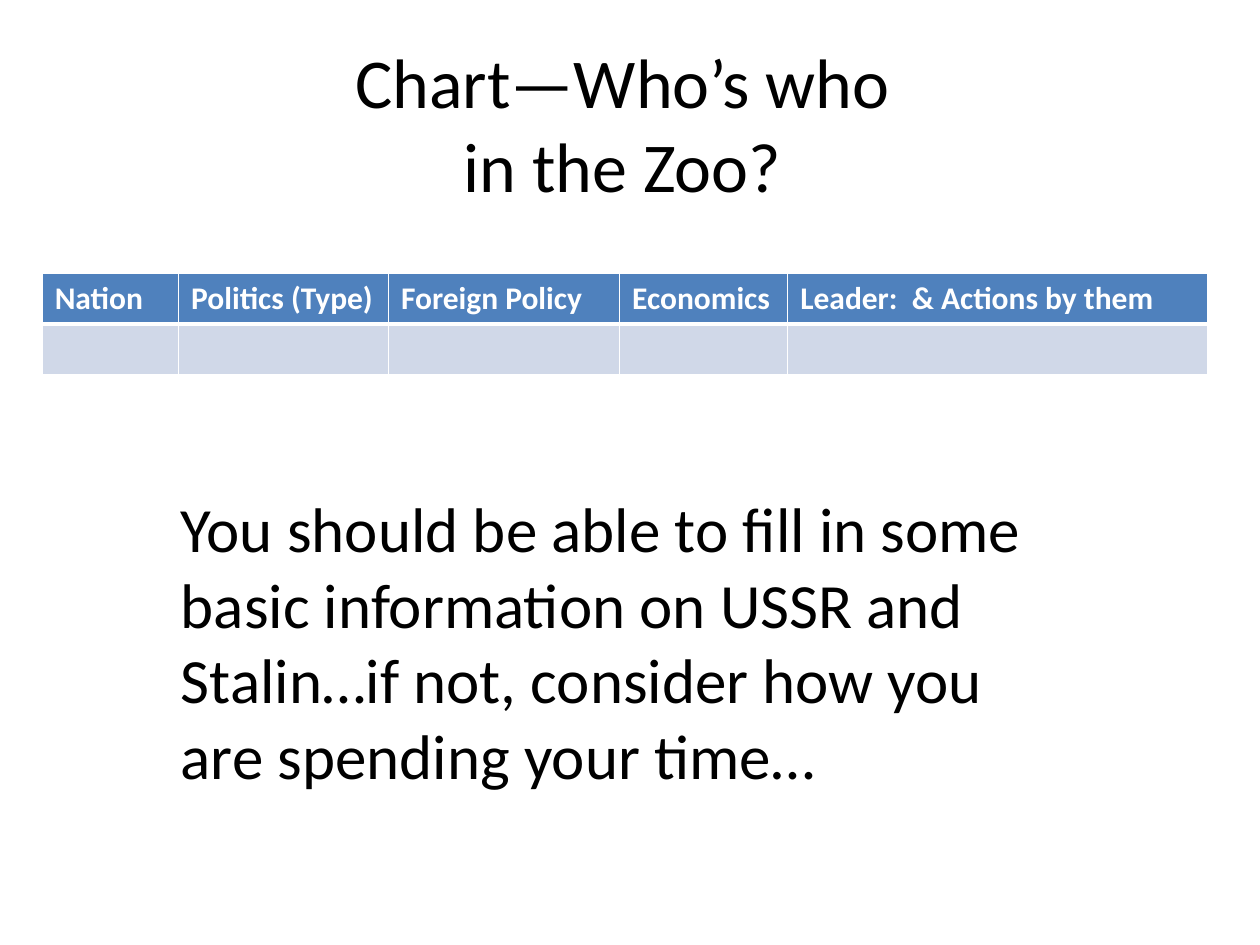
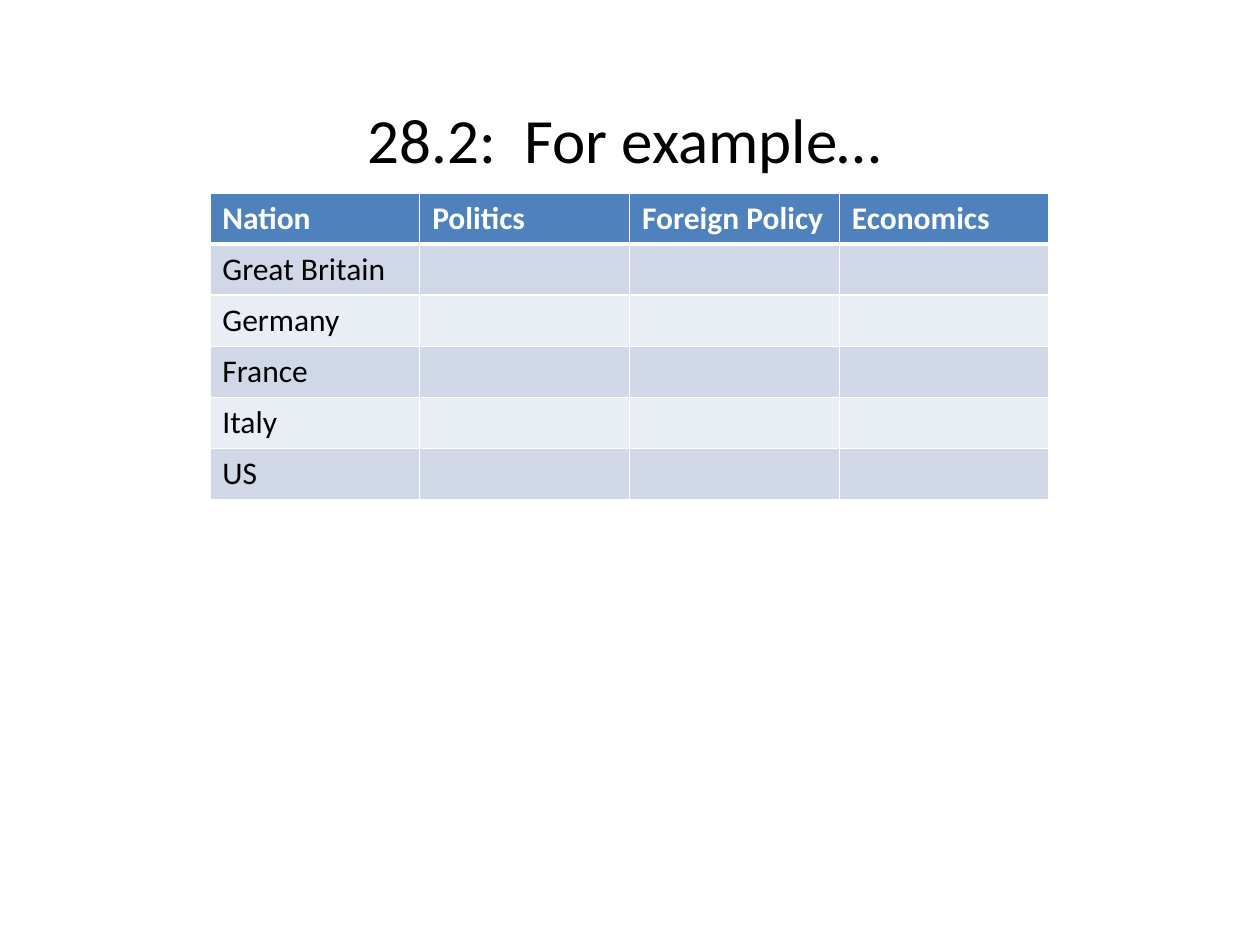
from lxml import etree
from pptx import Presentation
from pptx.dml.color import RGBColor
from pptx.enum.text import MSO_ANCHOR, MSO_AUTO_SIZE, PP_ALIGN
from pptx.oxml.ns import qn
from pptx.util import Cm, Pt

TOP = MSO_ANCHOR.TOP
GROW = MSO_AUTO_SIZE.SHAPE_TO_FIT_TEXT
LEFT = PP_ALIGN.LEFT
CENTER = PP_ALIGN.CENTER

FONT = "Calibri"
COLORS = {
    "text": "000000",
    "header_text": "FFFFFF",
    "header": "4F81BD",
    "band_dark": "D0D8E8",
    "band_light": "E9EDF4",
    "border": "FFFFFF",
}
CONTENT_LAYOUT = 1
TITLE_LAYOUT = 5
ROW_HEIGHT = 1.03
THIN, THICK = 1, 3


def color(name):
    return RGBColor.from_string(COLORS[name])


def style_font(font, size, color_name, bold=False):
    font.name = FONT
    font.size = Pt(size)
    font.bold = bold
    font.color.rgb = color(color_name)


def fill_placeholder(shape, text, box, size, alignment):
    shape.left, shape.top, shape.width, shape.height = map(Cm, box)
    frame = shape.text_frame
    frame.text = text
    frame.word_wrap = True
    frame.auto_size = GROW
    frame.vertical_anchor = TOP
    paragraph = frame.paragraphs[0]
    properties = paragraph._p.get_or_add_pPr()
    properties.set("marL", "0")
    properties.set("indent", "0")
    paragraph.alignment = alignment
    paragraph.space_before = Pt(0)
    etree.SubElement(properties, qn("a:buNone"))
    style_font(paragraph.font, size, "text")


def add_border(cell, side, width):
    properties = cell._tc.get_or_add_tcPr()
    line = etree.SubElement(properties, qn(f"a:ln{side}"), w=str(Pt(width)))
    fill = etree.SubElement(line, qn("a:solidFill"))
    etree.SubElement(fill, qn("a:srgbClr"), val=COLORS["border"])


def format_cell(cell, text, row):
    is_header = row == 0
    widths = {
        "L": THIN,
        "R": THIN,
        "T": THICK if row == 1 else THIN,
        "B": THICK if is_header else THIN,
    }
    for side, width in widths.items():
        add_border(cell, side, width)
    band = "band_dark" if row % 2 else "band_light"
    cell.fill.solid()
    cell.fill.fore_color.rgb = color("header" if is_header else band)
    cell.text = text
    style_font(cell.text_frame.paragraphs[0].font, 18,
               "header_text" if is_header else "text", is_header)


def add_banded_table(slide, left, top, column_widths, headers, row_labels):
    rows = [headers] + [[label] + [""] * (len(headers) - 1) for label in row_labels]
    table = slide.shapes.add_table(
        len(rows), len(headers), Cm(left), Cm(top),
        Cm(sum(column_widths)), Cm(ROW_HEIGHT * len(rows))).table
    for column, width in zip(table.columns, column_widths):
        column.width = Cm(width)
    for row, texts in enumerate(rows):
        table.rows[row].height = Cm(ROW_HEIGHT)
        for column, text in enumerate(texts):
            format_cell(table.cell(row, column), text, row)


def add_slide(presentation, layout, title, title_box, title_size):
    slide = presentation.slides.add_slide(presentation.slide_layouts[layout])
    fill_placeholder(slide.shapes.title, title, title_box, title_size, CENTER)
    return slide


def build_chart_slide(presentation):
    slide = add_slide(presentation, CONTENT_LAYOUT, "Chart—Who’s who in the Zoo?",
                      (6.35, 0.64, 12.4, 3.68), 40)
    add_banded_table(
        slide, 0.85, 5.5, [2.75, 4.23, 4.66, 3.39, 8.47],
        ["Nation", "Politics (Type)", "Foreign Policy", "Economics",
         "Leader:  & Actions by them"],
        [""])
    fill_placeholder(
        slide.placeholders[1],
        "You should be able to fill in some basic information on USSR and "
        "Stalin…if not, consider how you are spending your time…",
        (3.39, 9.74, 18.2, 6.4), 36, LEFT)


def build_example_slide(presentation):
    slide = add_slide(presentation, TITLE_LAYOUT, "28.2:  For example…",
                      (4.23, 1.9, 16.72, 1.8), 36)
    headers = ["Nation", "Politics", "Foreign Policy", "Economics"]
    add_banded_table(slide, 4.23, 3.89, [4.23] * len(headers), headers,
                     ["Great Britain", "Germany", "France", "Italy", "US"])


def main():
    presentation = Presentation()
    presentation.slide_width = Cm(25.4)
    presentation.slide_height = Cm(19.05)
    build_chart_slide(presentation)
    build_example_slide(presentation)
    presentation.save("out.pptx")


if __name__ == "__main__":
    main()
